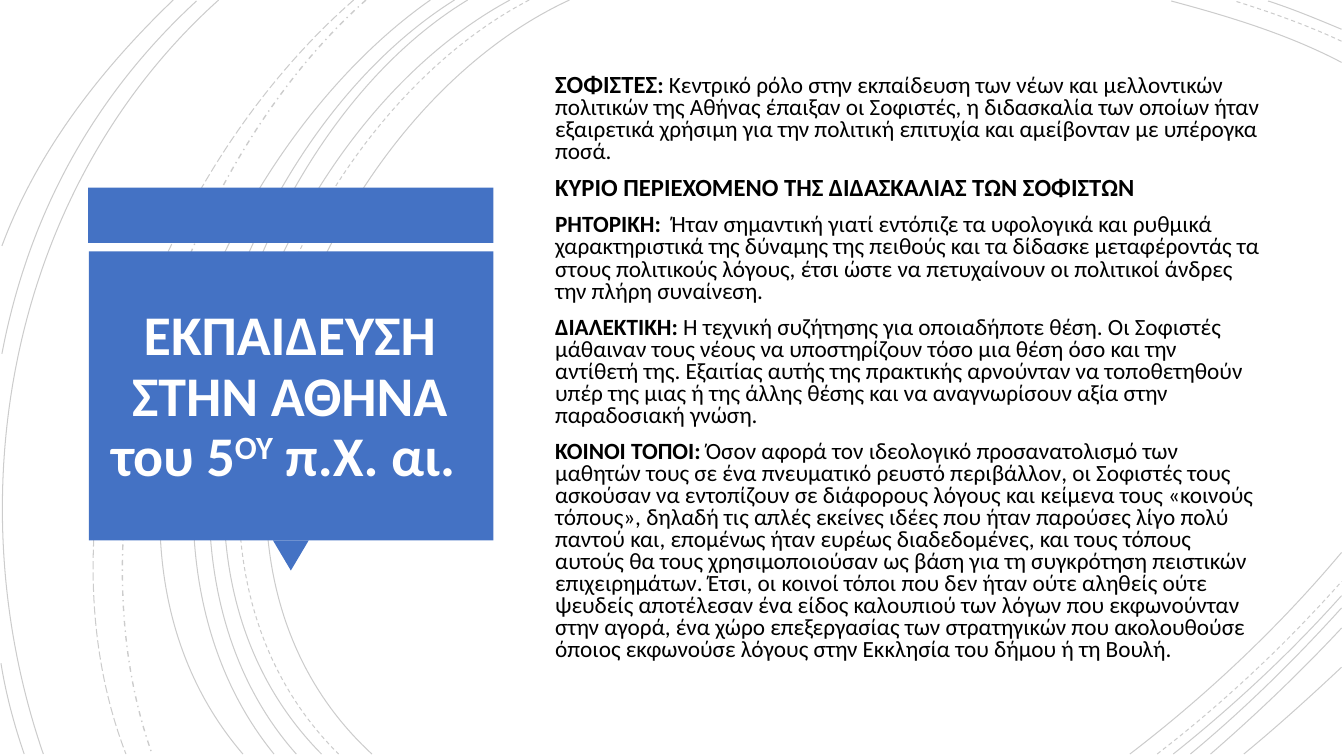
from pptx import Presentation
from pptx.dml.color import RGBColor
from pptx.enum.dml import MSO_LINE
from pptx.enum.shapes import MSO_SHAPE
from pptx.enum.text import MSO_ANCHOR, PP_ALIGN
from pptx.oxml.xmlchemy import OxmlElement
from pptx.util import Pt

RECT, TRIANGLE = MSO_SHAPE.RECTANGLE, MSO_SHAPE.ISOSCELES_TRIANGLE
MIDDLE = MSO_ANCHOR.MIDDLE
LEFT, CENTER = PP_ALIGN.LEFT, PP_ALIGN.CENTER
SOLID, DASH = MSO_LINE.SOLID, MSO_LINE.DASH
LONG, DOT = MSO_LINE.LONG_DASH, MSO_LINE.DASH_DOT

BLUE, BLACK, WHITE = "4472C4", "000000", "FFFFFF"
FLOOR, EDGE = 538.6, 958.3

# top x, first control x and y, second control x and y, bottom x, dash, width
SWEEPS = [
    (406.8, 226.8, 82.8, 103, 388.8, 265.7, SOLID, 0.75),
    (378, 205.2, 90, 88.6, 386.6, 241.9, DASH, 0.75),
    (364.3, 194.4, 91.4, 79.2, 386.6, 229.7, SOLID, 0.75),
    (334.1, 175.7, 95.8, 79.2, 389.5, 211.7, SOLID, 0.75),
    (324.7, 166.3, 99.4, 69.8, 383.8, 195.8, SOLID, 0.75),
    (307.4, 156.2, 105.8, 38.2, 380.9, 173.5, SOLID, 0.75),
    (261.4, 126.7, 119.5, 46.8, 366.5, 108.7, DOT, 1),
    (252.7, 113, 121.7, 20.9, 359.3, 90, LONG, 0.75),
    (156.2, 7.9, 133.2, -33.1, 352.8, 31, SOLID, 0.75),
]
# bottom x, both controls, y at the right edge, dash
LOWER = [
    (807.1, (861.8, 496.8), (913.7, 447.8), 394.6, SOLID),
    (826.6, (873.4, 502.6), (918, 460.8), 415.4, DASH),
    (838.1, (880.6, 504.7), (921.6, 466.6), 425.5, SOLID),
    (850.3, (888.5, 506.9), (924.5, 471.6), 434.2, SOLID),
    (864.7, (897.1, 510.5), (928.8, 480.2), 448.6, SOLID),
    (888.5, (912.2, 519.1), (935.3, 498.2), 476.6, SOLID),
]
# y at the right edge, both controls, top x, dash
UPPER = [
    (44.6, (920.2, 24.5), (877, 11.5), 836.6, SOLID),
    (29.5, (933.8, 18), (907.2, 8.6), 882, DASH),
    (20.9, (941, 13.7), (923.8, 6.5), 905.8, SOLID),
]
CORNER = [
    [(140.4, 0.7), (66.2, 69.1), (20.2, 154.1), (1.4, 252.7)],
    [(0.7, 473.8), (4.3, 496.1), (10.1, 517.7), (17.3, FLOOR)],
    [(123.8, 0), (72, 49.7), (26.6, 108), (1.4, 175.7)],
]

HEAD = {"size": Pt(40), "bold": True}
BIG = {"size": Pt(17.6), "bold": True}
BOLD = {"size": Pt(16.6), "bold": True}
BODY = {"size": Pt(16.6), "bold": False}

TITLE = [[("ΕΚΠΑΙΔΕΥΣΗ ΣΤΗΝ ΑΘΗΝΑ του 5", HEAD), ("ΟΥ", {**HEAD, "raise": 30000}),
          (" π.Χ. αι. ", HEAD)]]
NOTES = [
    [("ΣΟΦΙΣΤΕΣ", BIG), (": ", BOLD),
     ("Κεντρικό ρόλο στην εκπαίδευση των νέων και μελλοντικών πολιτικών της Αθήνας "
      "έπαιξαν οι Σοφιστές, η διδασκαλία των οποίων ήταν εξαιρετικά χρήσιμη για την "
      "πολιτική επιτυχία και αμείβονταν με υπέρογκα ποσά.", BODY)],
    [("ΚΥΡΙΟ ΠΕΡΙΕΧΟΜΕΝΟ ΤΗΣ ΔΙΔΑΣΚΑΛΙΑΣ ΤΩΝ ΣΟΦΙΣΤΩΝ", BIG)],
    [("ΡΗΤΟΡΙΚΗ:  ", BOLD),
     ("Ήταν σημαντική γιατί εντόπιζε τα υφολογικά και ρυθμικά χαρακτηριστικά της "
      "δύναμης της πειθούς και τα δίδασκε μεταφέροντάς τα στους πολιτικούς λόγους, "
      "έτσι ώστε να πετυχαίνουν οι πολιτικοί άνδρες την πλήρη συναίνεση.", BODY)],
    [("ΔΙΑΛΕΚΤΙΚΗ: ", BOLD),
     ("Η τεχνική συζήτησης για οποιαδήποτε θέση. Οι Σοφιστές μάθαιναν τους νέους να "
      "υποστηρίζουν τόσο μια θέση όσο και την αντίθετή της. Εξαιτίας αυτής της "
      "πρακτικής αρνούνταν να τοποθετηθούν υπέρ της μιας ή της άλλης θέσης και να "
      "αναγνωρίσουν αξία στην παραδοσιακή γνώση.", BODY)],
    [("ΚΟΙΝΟΙ ΤΟΠΟΙ: ", BOLD),
     ("Όσον αφορά τον ιδεολογικό προσανατολισμό των μαθητών τους σε ένα πνευματικό "
      "ρευστό περιβάλλον, οι Σοφιστές τους ασκούσαν να εντοπίζουν σε διάφορους λόγους "
      "και κείμενα τους «κοινούς τόπους», δηλαδή τις απλές εκείνες ιδέες που ήταν "
      "παρούσες λίγο πολύ παντού και, επομένως ήταν ευρέως διαδεδομένες, και τους "
      "τόπους αυτούς θα τους χρησιμοποιούσαν ως βάση για τη συγκρότηση πειστικών "
      "επιχειρημάτων. Έτσι, οι κοινοί τόποι που δεν ήταν ούτε αληθείς ούτε ψευδείς "
      "αποτέλεσαν ένα είδος καλουπιού των λόγων που εκφωνούνταν στην αγορά, ένα χώρο "
      "επεξεργασίας των στρατηγικών που ακολουθούσε όποιος εκφωνούσε λόγους στην "
      "Εκκλησία του δήμου ή τη Βουλή.", BODY)],
]


def paint(target, code):
    target.rgb = RGBColor.from_string(code)


class Page:
    def __init__(self, slide, font):
        self.shapes, self.font = slide.shapes, font

    def arc(self, points, dash=SOLID, width=0.75):
        """Draw one faint cubic curve: start, two controls, end."""
        start, *rest = [(Pt(x), Pt(y)) for x, y in points]
        pen = self.shapes.build_freeform(*start)
        pen.add_line_segments(rest, close=False)
        shape = pen.convert_to_shape()
        shape.shadow.inherit = False
        shape.fill.background()
        line = shape.line
        line.fill.solid()
        paint(line.color, BLACK)
        line.width, line.dash_style = Pt(width), dash
        alpha = OxmlElement("a:alpha")
        alpha.set("val", "20000")
        shape.element.xpath(".//a:ln//a:srgbClr")[0].append(alpha)
        # The three straight segments become the points of one Bezier curve.
        curve = OxmlElement("a:cubicBezTo")
        steps = shape.element.xpath(".//a:lnTo")
        steps[0].addprevious(curve)
        for step in steps:
            curve.append(step[0])
            step.getparent().remove(step)

    def block(self, kind, box, turn=0):
        shape = self.shapes.add_shape(kind, *map(Pt, box))
        shape.shadow.inherit = False
        shape.fill.solid()
        paint(shape.fill.fore_color, BLUE)
        shape.line.fill.background()
        shape.rotation = turn

    def text(self, box, paras, color, align, lead, foot=3.6):
        frame = self.shapes.add_textbox(*map(Pt, box)).text_frame
        frame.word_wrap, frame.vertical_anchor = True, MIDDLE
        frame.margin_bottom = Pt(foot)
        for i, runs in enumerate(paras):
            para = frame.add_paragraph() if i else frame.paragraphs[0]
            para.alignment, para.line_spacing = align, lead
            para.space_before = Pt(10 if i else 0)
            for words, style in runs:
                run = para.add_run()
                run.text, run.font.name = words, self.font
                paint(run.font.color, color)
                for key, value in style.items():
                    if key == "raise":
                        run.font._element.set("baseline", str(value))
                    else:
                        setattr(run.font, key, value)


def main():
    deck = Presentation()
    deck.slide_width, deck.slide_height = Pt(960), Pt(540)
    page = Page(deck.slides.add_slide(deck.slide_layouts[6]), "Calibri")

    for top, ax, ay, bx, by, end, dash, width in SWEEPS:
        page.arc([(top, 0), (ax, ay), (bx, by), (end, FLOOR)], dash, width)
    for x, a, b, y, dash in LOWER:
        page.arc([(x, FLOOR), a, b, (EDGE, y)], dash)
    for y, a, b, x, dash in UPPER:
        page.arc([(EDGE, y), a, b, (x, 0.7)], dash)
    for points in CORNER:
        page.arc(points)

    page.block(RECT, (63, 134, 289.5, 39.5))
    page.block(TRIANGLE, (195, 386, 25.5, 21.5), 180)
    page.block(RECT, (63.5, 179.5, 289, 206.5))
    page.text((71.3, 190, 271.5, 188.5), TITLE, WHITE, CENTER, 0.9)
    page.text((389.5, 21, 520, 494), NOTES, BLACK, LEFT, 0.79, 13.6)
    deck.save("out.pptx")


if __name__ == "__main__":
    main()
